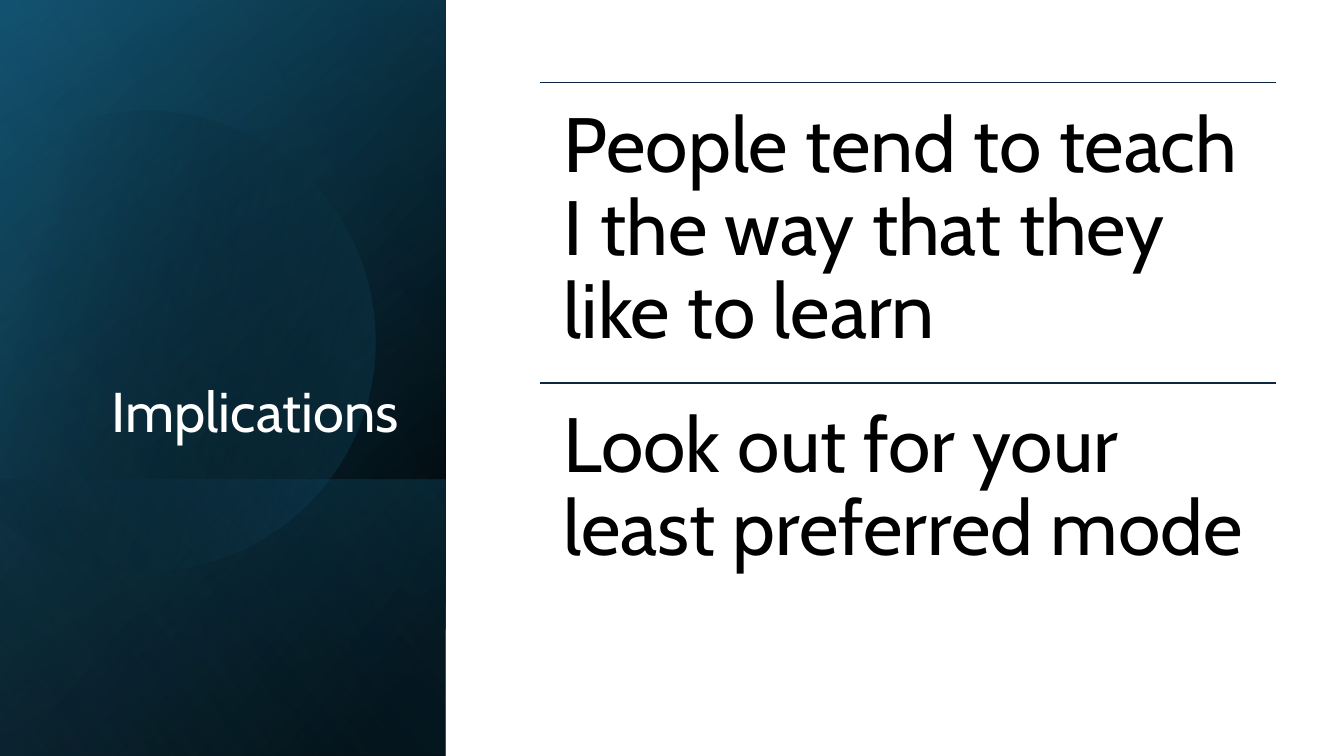
from math import cos, radians, sin

from lxml import etree
from pptx import Presentation
from pptx.dml.color import RGBColor
from pptx.enum.shapes import MSO_CONNECTOR as Connector, MSO_SHAPE as Shape
from pptx.enum.text import MSO_ANCHOR as Anchor, PP_ALIGN as Align
from pptx.oxml.ns import qn
from pptx.util import Inches, Pt

BLACK = RGBColor(0x00, 0x00, 0x00)
WHITE = RGBColor(0xFF, 0xFF, 0xFF)
DEEP_TEAL = RGBColor(0x10, 0x48, 0x62)
TEAL = RGBColor(0x15, 0x60, 0x82)
SKY = RGBColor(0x46, 0xB1, 0xE1)
NAVY = RGBColor(0x0E, 0x28, 0x41)


def paint(shape, angle, stops):
    shape.shadow.inherit = False
    shape.line.fill.background()
    shape.fill.gradient()
    gradient = shape._element.spPr.find(qn("a:gradFill"))
    for child in list(gradient):
        gradient.remove(child)
    stop_list = etree.SubElement(gradient, qn("a:gsLst"))
    for position, color, opacity in stops:
        stop = etree.SubElement(stop_list, qn("a:gs"), pos=str(position * 1000))
        tint = etree.SubElement(stop, qn("a:srgbClr"), val=str(color))
        etree.SubElement(tint, qn("a:alpha"), val=str(opacity * 1000))
    etree.SubElement(gradient, qn("a:lin"), ang=str(angle * 60000), scaled="0")


def add_text(box, text, size, color):
    box.text_frame.word_wrap = True
    para = box.text_frame.paragraphs[0]
    para.text = text
    para.line_spacing = 0.9
    para.font.name = "Cabin"
    para.font.size = Pt(size)
    para.font.color.rgb = color
    return para


deck = Presentation()
deck.slide_width, deck.slide_height = Inches(13.33), Inches(7.5)
page = deck.slides.add_slide(deck.slide_layouts[6])
shapes = page.shapes

FULL_PANEL = (-1.54, 1.54, 7.5, 4.42)
LOWER_PANEL = (0.84, 3.92, 2.74, 4.42)
panels = [
    (FULL_PANEL, 50, [(8, BLACK, 100), (100, DEEP_TEAL, 100)]),
    (FULL_PANEL, 30, [(0, BLACK, 0), (99, TEAL, 46)]),
    (LOWER_PANEL, 130, [(2, TEAL, 29), (100, BLACK, 30)]),
    (FULL_PANEL, 120, [(0, BLACK, 0), (99, SKY, 11)]),
]

DISC_TILT = 16.1
DISC_CENTER = (1.585, 3.345)
disc_start = (1.49, 1.1)
disc_segments = [
    [(2.46, 1.12), (3.35, 1.77), (3.63, 2.75)],
    [(3.98, 3.97), (3.28, 5.23), (2.07, 5.58)],
    [(1.31, 5.8), (0.53, 5.61), (-0.03, 5.14)],
    [(-0.15, 5.03)],
    [(-0.15, 1.75)],
    [(0, 1.61)],
    [(0.23, 1.42), (0.5, 1.28), (0.8, 1.19)],
    [(1.03, 1.13), (1.26, 1.1), (1.49, 1.1)],
]
STEPS = 24
outline = [disc_start]
for segment in disc_segments:
    if len(segment) == 1:
        outline += segment
        continue
    curve = [outline[-1], *segment]
    for step in range(1, STEPS + 1):
        t = step / STEPS
        weights = ((1 - t) ** 3, 3 * t * (1 - t) ** 2, 3 * t * t * (1 - t), t ** 3)
        outline.append(tuple(
            sum(weight * point[axis] for weight, point in zip(weights, curve))
            for axis in (0, 1)
        ))

turn = radians(DISC_TILT)
center_x, center_y = DISC_CENTER
level_outline = []
for x, y in outline:
    dx, dy = x - center_x, y - center_y
    level_outline.append((
        Inches(center_x + dx * cos(turn) - dy * sin(turn)),
        Inches(center_y + dx * sin(turn) + dy * cos(turn)),
    ))

for index, (place, angle, stops) in enumerate(panels):
    if index == 3:
        builder = shapes.build_freeform(*level_outline[0])
        builder.add_line_segments(level_outline[1:], close=True)
        disc = builder.convert_to_shape()
        disc.rotation = 360 - DISC_TILT
        paint(disc, 30, [(29, BLACK, 0), (100, TEAL, 43)])
    panel = shapes.add_shape(Shape.RECTANGLE, *map(Inches, place))
    panel.rotation = 90
    panel._element.spPr.find(qn("a:xfrm")).set("flipH", "1")
    paint(panel, angle, stops)

title = shapes.add_textbox(Inches(0.64), Inches(1.84), Inches(3.41), Inches(2.62))
title.text_frame.vertical_anchor = Anchor.BOTTOM
add_text(title, "Implications", 40, WHITE).alignment = Align.RIGHT

ROW_LEFT, ROW_TOP, ROW_WIDTH, ROW_HEIGHT = 5.36, 0.82, 7.3, 2.98
implications = [
    "People tend to teach I the way that they like to learn",
    "Look out for your least preferred mode",
]
for row, implication in enumerate(implications):
    left, top = Inches(ROW_LEFT), Inches(ROW_TOP + row * ROW_HEIGHT)
    width = Inches(ROW_WIDTH)
    rule = shapes.add_connector(Connector.STRAIGHT, left, top, left + width, top)
    rule.line.color.rgb = NAVY
    rule.line.width = Pt(1)
    etree.SubElement(rule._element.spPr, qn("a:effectLst"))

    box = shapes.add_textbox(left, top, width, Inches(ROW_HEIGHT))
    frame = box.text_frame
    frame.margin_left = frame.margin_right = Inches(0.23)
    frame.margin_top = frame.margin_bottom = Inches(0.23)
    add_text(box, implication, 55, BLACK)

deck.save("out.pptx")
